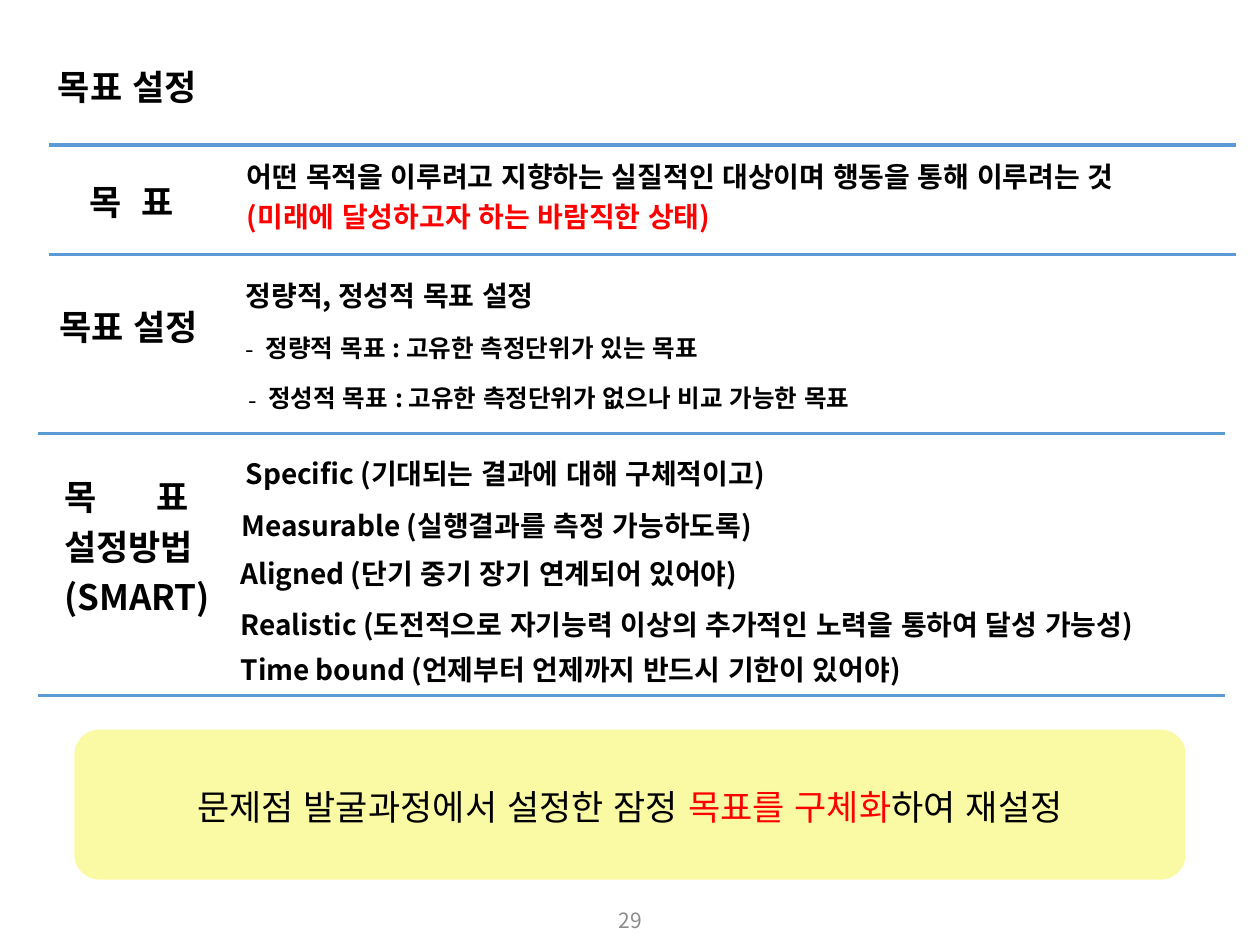
from lxml import etree
from pptx import Presentation, util as u
from pptx.dml.color import RGBColor
from pptx.enum import shapes, text
from pptx.oxml.ns import qn

FONT = "Noto Sans CJK KR"
BLACK, RED, GREY, BLUE, YELLOW = "000000", "FF0000", "8C8C8C", "5B9BD5", "FAFAA4"
TEXT_LEFT = 1.5   # text column, from the left edge of a section
RULE_WIDTH = 9.42
NARROW, WIDE = 7.39, 7.9   # widths of the text column
AFTER_SHARE = 0.35   # space after a paragraph, as a share of the text size


def colour(value):
    return RGBColor.from_string(value)


def apply(target, **values):
    for name, value in values.items():
        setattr(target, name, value)


def place(shape, box):
    apply(shape, **dict(zip(("left", "top", "width", "height"), map(u.Inches, box))))


def write(frame, paragraphs, size, bold=True, inset=0.06, spacing=0.9, after=0,
          align=text.PP_ALIGN.LEFT, anchor=text.MSO_ANCHOR.TOP, tab=None, dash=None):
    """Fill a text frame; each paragraph is a list of (words, colour) runs."""
    apply(frame, word_wrap=True, auto_size=text.MSO_AUTO_SIZE.NONE, vertical_anchor=anchor,
          **{f"margin_{side}": u.Inches(inset) for side in ("left", "right", "top", "bottom")})
    for index, runs in enumerate(paragraphs):
        paragraph = frame.add_paragraph() if index else frame.paragraphs[0]
        apply(paragraph, alignment=align, line_spacing=spacing,
              space_before=u.Pt(0), space_after=u.Pt(after))
        props = paragraph._p.get_or_add_pPr()
        if dash:
            props.set("marL", str(u.Inches(dash)))
            props.set("indent", str(-u.Inches(dash)))
            etree.SubElement(props, qn("a:buFont"), typeface=FONT)
            etree.SubElement(props, qn("a:buChar"), char="-")
        if tab:
            stops = etree.SubElement(props, qn("a:tabLst"))
            etree.SubElement(stops, qn("a:tab"), pos=str(u.Inches(tab)), algn="l")
        apply(paragraph.font, size=u.Pt(size), bold=bold)
        for words, shade in runs:
            run = paragraph.add_run()
            run.text = words
            apply(run.font, size=u.Pt(size), bold=bold, name=FONT)
            run.font.color.rgb = colour(shade)
            run_props = run._r.get_or_add_rPr()
            run_props.set("lang", "ko-KR")
            run_props.set("kern", "0")
            etree.SubElement(run_props, qn("a:ea"), typeface=FONT)


def add_block(slide, box, paragraphs, size, **layout):
    """Place text in an unfilled rectangular outline."""
    left, top, width, height = map(u.Inches, box)
    builder = slide.shapes.build_freeform(left, top)
    builder.add_line_segments(
        [(left + width, top), (left + width, top + height), (left, top + height)], close=True)
    block = builder.convert_to_shape()
    block.fill.background()
    block.line.fill.background()
    block.shadow.inherit = False
    write(block.text_frame, paragraphs, size, after=AFTER_SHARE * size, **layout)


def add_rule(slide, left, top, weight):
    rule = slide.shapes.add_connector(
        shapes.MSO_CONNECTOR.STRAIGHT,
        *map(u.Inches, (left, top, left + RULE_WIDTH, top)))
    rule.line.color.rgb = colour(BLUE)
    rule.line.width = u.Pt(weight)
    etree.SubElement(rule._element.spPr, qn("a:effectLst"))


def add_heading(slide, box, words):
    title = slide.shapes.title
    place(title, box)
    write(title.text_frame, [[(words, BLACK)]], 20, inset=0.05, spacing=2.0)


def add_section(slide, left, top, label, entries):
    """Place a label and its entries, all offset from the section's corner."""
    (dx, dy, width, height), names, tab = label
    add_block(slide, (left + dx, top + dy, width, height),
              [[(name, BLACK)] for name in names], 20, inset=0.08, tab=tab)
    for (dx, dy, width, height), paragraphs, size, dash in entries:
        add_block(slide, (left + TEXT_LEFT + dx, top + dy, width, height),
                  paragraphs, size, dash=dash)


def add_conclusion(slide, box, runs):
    panel = slide.shapes.add_shape(
        shapes.MSO_SHAPE.ROUNDED_RECTANGLE, *map(u.Inches, box))
    panel.adjustments[0] = 0.167
    panel.shadow.inherit = False
    panel.fill.solid()
    panel.fill.fore_color.rgb = colour(YELLOW)
    panel.line.fill.background()
    write(panel.text_frame, [runs], 20, bold=False, spacing=1.1,
          align=text.PP_ALIGN.CENTER, anchor=text.MSO_ANCHOR.MIDDLE)


def add_page_number(slide, box, number):
    page = slide.shapes.add_textbox(*map(u.Inches, box))
    write(page.text_frame, [[(number, GREY)]], 12, bold=False, spacing=1.0,
          align=text.PP_ALIGN.CENTER, anchor=text.MSO_ANCHOR.MIDDLE)


def main():
    prs = Presentation()
    apply(prs, slide_width=u.Inches(10), slide_height=u.Inches(7.5))
    slide = prs.slides.add_slide(prs.slide_layouts[5])

    add_heading(slide, (0.41, 0.14, 1.49, 0.85), "목표 설정")

    for left, top, weight in (
            (0.39, 1.15, 2.25), (0.39, 2.02, 1.25), (0.3, 3.44, 1.25), (0.3, 5.52, 2.25)):
        add_rule(slide, left, top, weight)

    add_section(slide, 0.39, 1.15, ((0.24, 0.24, 0.98, 0.54), ["목\t표"], 0.41), [
        ((0.01, 0.09, WIDE, 0.87), [
            [("어떤 목적을 이루려고 지향하는 실질적인 대상이며 행동을 통해 이루려는 것", BLACK)],
            [("(미래에 달성하고자 하는 바람직한 상태)", RED)]], 16, None)])

    add_section(slide, 0.39, 2.02, ((0, 0.36, 1.41, 0.7), ["목표 설정"], None), [
        ((0, 0.16, NARROW, 0.43), [[("정량적, 정성적 목표 설정", BLACK)]], 16, None),
        ((0, 0.59, NARROW, 0.43),
         [[("정량적 목표 : 고유한 측정단위가 있는 목표", BLACK)]], 14, 0.16),
        ((0.02, 0.99, NARROW, 0.43),
         [[("정성적 목표 : 고유한 측정단위가 없으나 비교 가능한 목표", BLACK)]], 14, 0.16)])

    smart = (
        (0.09, 0.15, NARROW, "Specific (기대되는 결과에 대해 구체적이고)"),
        (0.06, 0.57, NARROW, "Measurable (실행결과를 측정 가능하도록)"),
        (0.05, 0.95, NARROW, "Aligned (단기 중기 장기 연계되어 있어야)"),
        (0.05, 1.35, WIDE,
         "Realistic (도전적으로 자기능력 이상의 추가적인 노력을 통하여 달성 가능성)"),
        (0.05, 1.71, NARROW, "Time bound (언제부터 언제까지 반드시 기한이 있어야)"))
    add_section(slide, 0.3, 3.44,
                ((0.13, 0.29, 1.5, 1.75), ["목\t표", "설정방법", "(SMART)"], 0.73),
                [((dx, dy, width, 0.34), [[(words, BLACK)]], 16, None)
                 for dx, dy, width, words in smart])

    add_conclusion(slide, (0.59, 5.79, 8.82, 1.19), [
        ("문제점 발굴과정에서 설정한 잠정 ", BLACK), ("목표를 구체화", RED), ("하여 재설정", BLACK)])

    add_page_number(slide, (3.88, 7.1, 2.25, 0.4), "29")
    prs.save("out.pptx")


if __name__ == "__main__":
    main()
